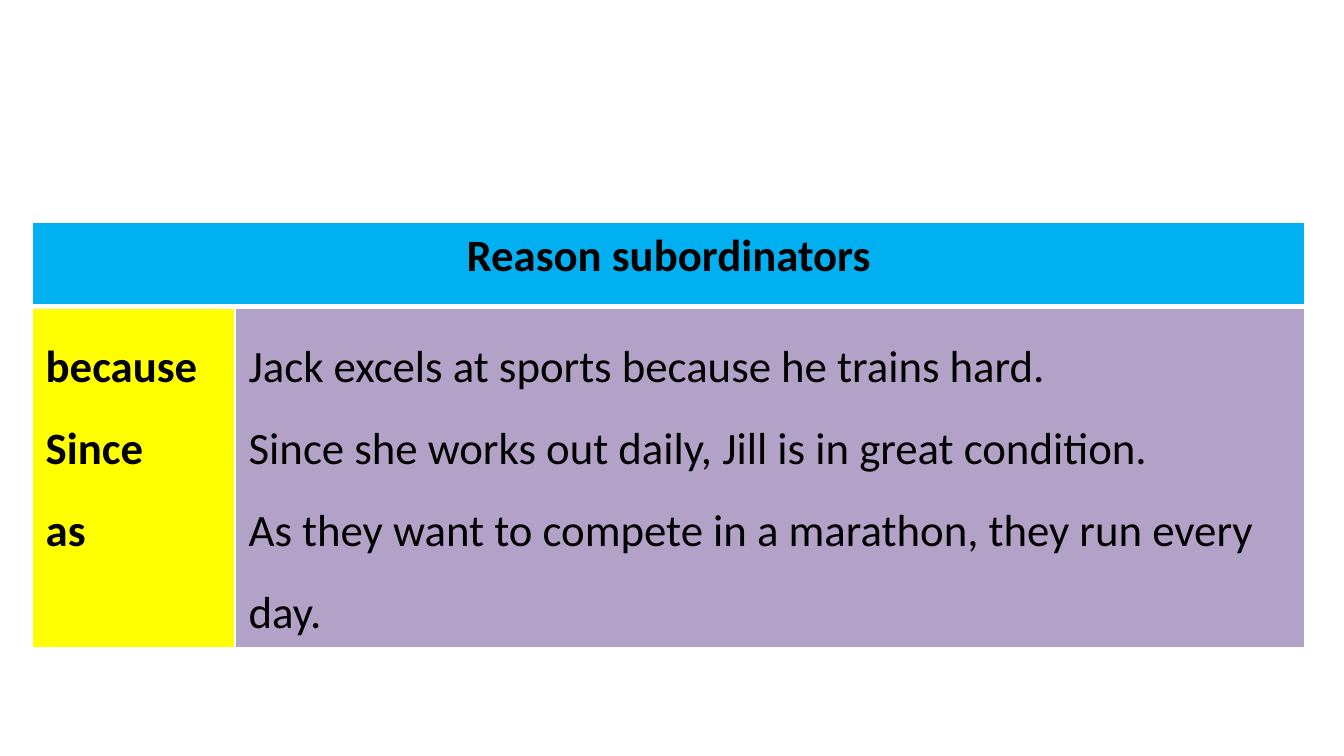
from lxml.etree import SubElement
from pptx import Presentation
from pptx.dml.color import RGBColor
from pptx.enum.text import PP_ALIGN
from pptx.oxml.ns import qn
from pptx.util import Inches, Pt

BLACK = RGBColor(0x00, 0x00, 0x00)
WHITE = RGBColor(0xFF, 0xFF, 0xFF)
BLUE = RGBColor(0x00, 0xB0, 0xF0)
YELLOW = RGBColor(0xFF, 0xFF, 0x00)
PURPLE = RGBColor(0xB3, 0xA2, 0xC7)


class Deck:
    FONT = {"name": "Calibri", "size": Pt(24)}

    def __init__(self, wide):
        self.deck = Presentation()
        self.deck.slide_width = Inches(wide)
        self.deck.slide_height = Inches(wide) * 9 // 16
        self.slide = self.deck.slides.add_slide(self.deck.slide_layouts[6])

    def table(self, left, top, cols, rows):
        frame = self.slide.shapes.add_table(
            len(rows), len(cols), Inches(left), Inches(top),
            Inches(sum(cols)), Inches(sum(rows)))
        grid = frame.table
        for col, width in zip(grid.columns, cols):
            col.width = Inches(width)
        for row, height in zip(grid.rows, rows):
            row.height = Inches(height)
        return grid

    def edges(self, cell, sizes):
        props = cell._tc.get_or_add_tcPr()
        for side, size in sizes.items():
            line = SubElement(props, qn(f"a:ln{side}"), w=str(Pt(size)))
            fill = SubElement(line, qn("a:solidFill"))
            SubElement(fill, qn("a:srgbClr"), val=str(WHITE))

    def cell(self, cell, lines, fill, bold, form):
        cell.fill.solid()
        cell.fill.fore_color.rgb = fill
        cell.text = "\n".join(lines)
        for para in cell.text_frame.paragraphs:
            for key, value in form.items():
                setattr(para, key, value)
            font = para.runs[0].font
            for key, value in {**self.FONT, "bold": bold}.items():
                setattr(font, key, value)
            font.color.rgb = BLACK

    def save(self):
        self.deck.save("out.pptx")


def main():
    pairs = [
        ("because", "Jack excels at sports because he trains hard."),
        ("Since", "Since she works out daily, Jill is in great condition."),
        ("as", "As they want to compete in a marathon, they run every day."),
    ]
    words, samples = zip(*pairs)
    deck = Deck(10)
    grid = deck.table(0.24, 1.65, [1.51, 7.96], [0.63, 2.54])
    head = grid.cell(0, 0)
    head.merge(grid.cell(0, 1))
    for cell in grid.iter_cells():
        top, base = (1, 3) if cell.is_merge_origin or cell.is_spanned else (3, 1)
        deck.edges(cell, {"L": 1, "R": 1, "T": top, "B": base})
    loose = {"line_spacing": 1.5}
    deck.cell(head, ["Reason subordinators"], BLUE, True,
              {"alignment": PP_ALIGN.CENTER})
    deck.cell(grid.cell(1, 0), words, YELLOW, True, loose)
    deck.cell(grid.cell(1, 1), samples, PURPLE, False, loose)
    deck.save()


if __name__ == "__main__":
    main()
